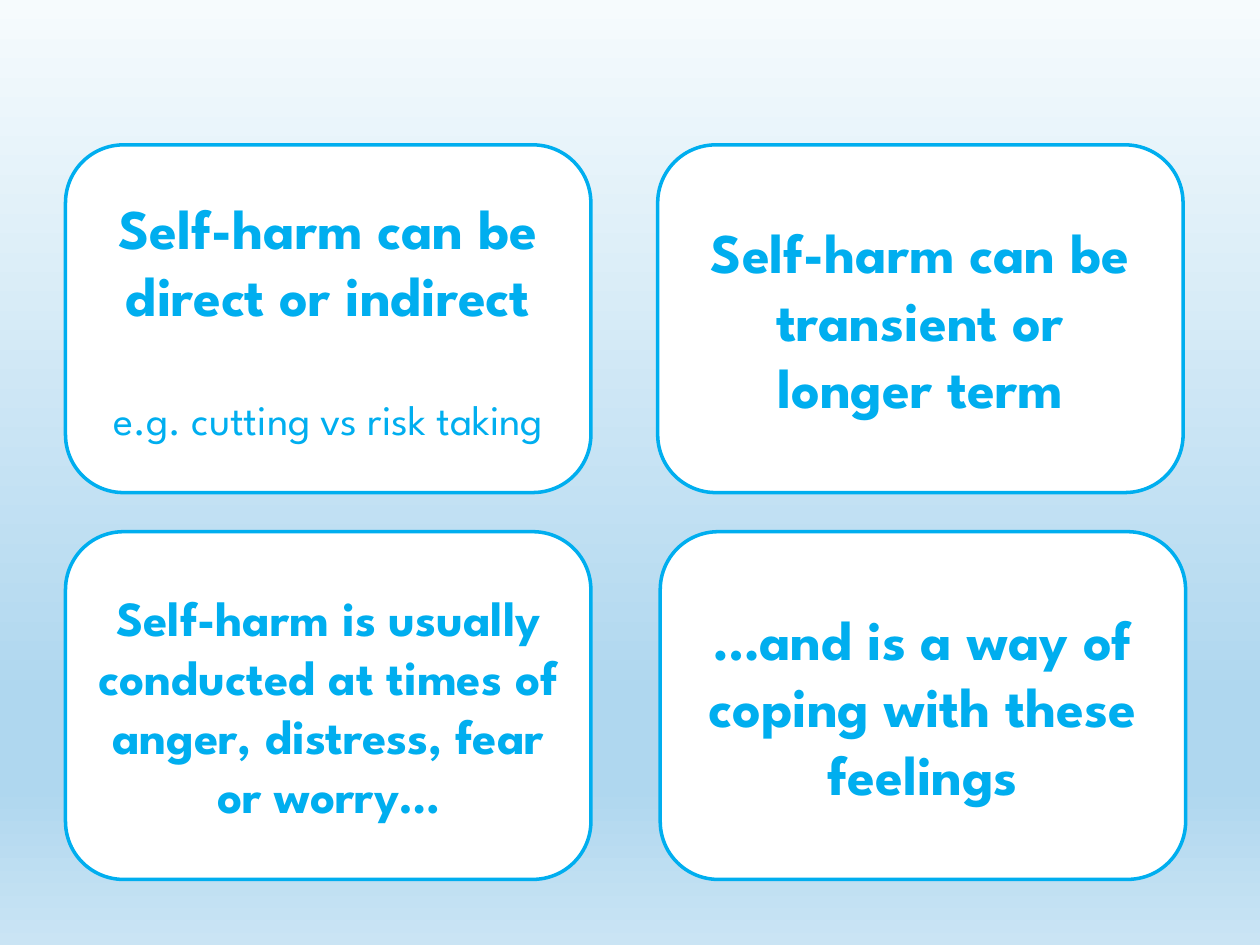
from lxml import etree
from pptx import Presentation
from pptx import util as u
from pptx.dml.color import RGBColor
from pptx.enum import shapes, text
from pptx.oxml.ns import qn

BLUE = RGBColor(0x00, 0xAE, 0xEF)
WHITE = RGBColor(0xFF, 0xFF, 0xFF)
PALE = RGBColor(0xF6, 0xFB, 0xFD)
SKY = RGBColor(0xAF, 0xD7, 0xEF)
MIST = RGBColor(0xCA, 0xE4, 0xF4)

WIDTH, HEIGHT = 4.17, 2.76
LEFT, TOP, LOW = 0.52, 1.15, 4.22


class Deck:
    font = "League Spartan"

    def __init__(self):
        self.prs = Presentation()
        self.prs.slide_width = u.Inches(10)
        self.prs.slide_height = u.Inches(7.5)
        self.slide = self.prs.slides.add_slide(self.prs.slide_layouts[6])

    def shade(self, stops):
        """Fill the background from top to bottom with (percent, colour) stops."""
        self.slide.background.fill.gradient()
        fill = self.slide.element.find(".//" + qn("a:gradFill"))
        for child in list(fill):
            fill.remove(child)
        group = etree.SubElement(fill, qn("a:gsLst"))
        for percent, color in stops:
            stop = etree.SubElement(group, qn("a:gs"), pos=str(percent * 1000))
            etree.SubElement(stop, qn("a:srgbClr"), val=str(color))
        etree.SubElement(fill, qn("a:lin"), ang="5400000", scaled="0")

    def card(self, left, top, words, size=32, note=None):
        box = self.slide.shapes.add_shape(
            shapes.MSO_SHAPE.ROUNDED_RECTANGLE, u.Inches(left), u.Inches(top),
            u.Inches(WIDTH), u.Inches(HEIGHT))
        box.shadow.inherit = False
        box.fill.solid()
        box.fill.fore_color.rgb = WHITE
        box.line.color.rgb = BLUE
        box.line.width = u.Pt(2)
        frame = box.text_frame
        frame.word_wrap = True
        frame.vertical_anchor = text.MSO_ANCHOR.MIDDLE
        self.label(frame.paragraphs[0], words, size, True)
        if note:
            para = frame.add_paragraph()
            self.label(para, note, 24, False)
            para.space_before = u.Pt(38)

    def label(self, para, words, size, bold):
        para.text = words
        para.alignment = text.PP_ALIGN.CENTER
        for run in para.runs:
            run.font.name = self.font
            run.font.size = u.Pt(size)
            run.font.bold = bold
            run.font.color.rgb = BLUE


def main():
    deck = Deck()
    deck.shade([(0, PALE), (74, SKY), (83, SKY), (100, MIST)])
    deck.card(LEFT, TOP, "Self-harm can be direct or indirect",
              note="e.g. cutting vs risk taking")
    deck.card(5.22, TOP, "Self-harm can be transient or\vlonger term")
    deck.card(LEFT, LOW, "Self-harm is usually conducted at times of anger, "
              "distress, fear or worry…", size=28)
    deck.card(5.24, LOW, "…and is a way of coping with these feelings")
    deck.prs.save("out.pptx")


if __name__ == "__main__":
    main()
